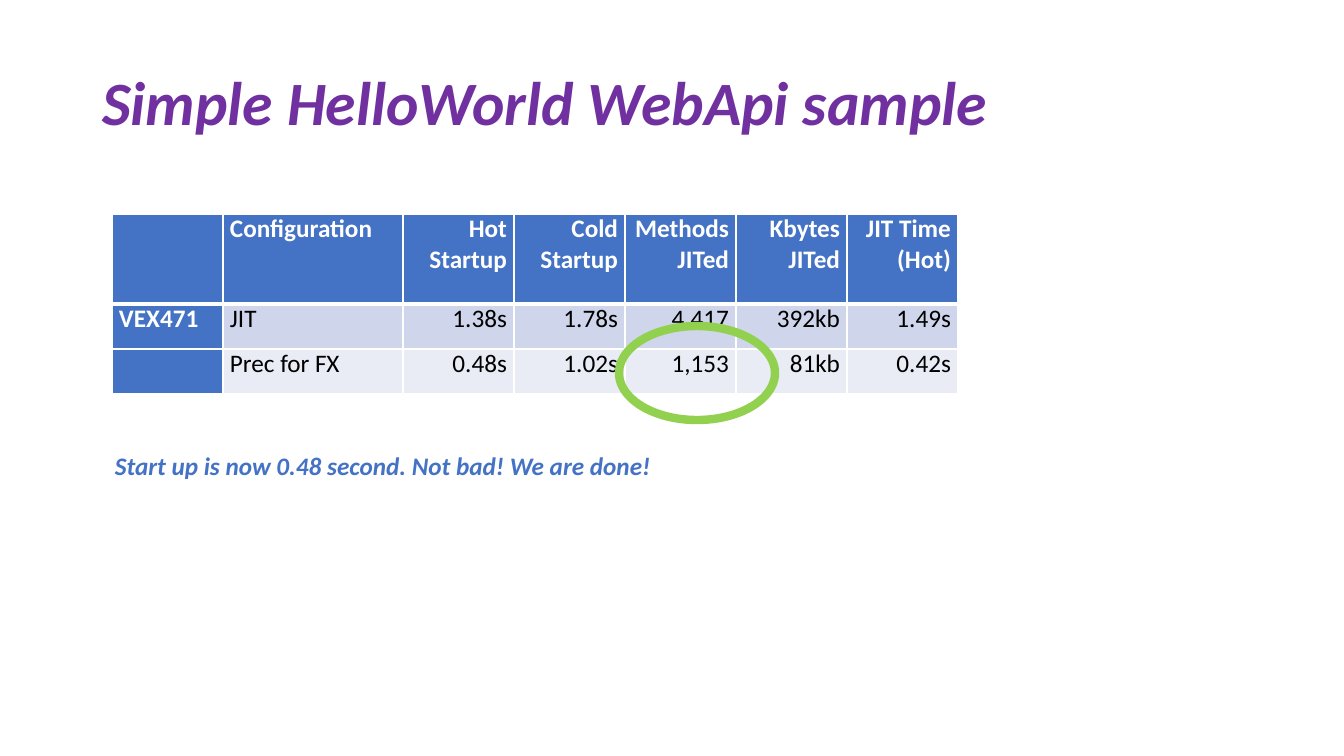
import pptx
import pptx.util
import pptx.dml.color
import pptx.enum.shapes
import pptx.enum.text
import pptx.oxml
import pptx.oxml.ns

RGBColor = pptx.dml.color.RGBColor
PP_ALIGN = pptx.enum.text.PP_ALIGN
MSO_ANCHOR = pptx.enum.text.MSO_ANCHOR

TITLE = "Simple HelloWorld WebApi sample"
NOTE = "Start up is now 0.48 second. Not bad! We are done!"
ROWS = [
    ["", "Configuration", "Hot Startup", "Cold Startup", "Methods JITed", "Kbytes JITed", "JIT Time (Hot)"],
    ["VEX471", "JIT", "1.38s", "1.78s", "4,417", "392kb", "1.49s"],
    ["", "Prec for FX", "0.48s", "1.02s", "1,153", "81kb", "0.42s"],
]
COL_WIDTHS = [111, 180] + [111] * 5
ROW_HEIGHTS = [90, 45, 45]

TITLE_BOX = (92, 33, 1159, 146)
TABLE_AT = (112, 214)
NOTE_BOX = (105, 445, 821, 40)
RING_BOX = (619, 326, 156, 94)
CELL_INSET = 7

FONT = "Calibri"
PURPLE = RGBColor(0x70, 0x30, 0xA0)
BLUE = RGBColor(0x44, 0x72, 0xC4)
GREEN = RGBColor(0x92, 0xD0, 0x50)
WHITE = RGBColor(0xFF, 0xFF, 0xFF)
BLACK = RGBColor(0, 0, 0)
BANDS = [RGBColor(0xCF, 0xD5, 0xEA), RGBColor(0xE9, 0xEB, 0xF5)]


def px(n):
    return pptx.util.Emu(round(n * 914400 / 100.8))


def box(lengths):
    return [px(n) for n in lengths]


def write(tf, text, size=18, color=BLACK, bold=False, italic=False, align=PP_ALIGN.LEFT, spacing=1.0):
    p = tf.paragraphs[0]
    p.alignment = align
    p.line_spacing = spacing
    r = p.add_run()
    r.text = text
    r.font.name = FONT
    r.font.size = pptx.util.Pt(size)
    r.font.color.rgb = color
    r.font.bold = bold
    r.font.italic = italic


def add_borders(cell, bottom):
    tc_pr = cell._tc.get_or_add_tcPr()
    for side, width in (("L", 1), ("R", 1), ("T", 1), ("B", bottom)):
        tc_pr.append(pptx.oxml.parse_xml(
            f'<a:ln{side} {pptx.oxml.ns.nsdecls("a")} w="{pptx.util.Pt(width)}">'
            f'<a:solidFill><a:srgbClr val="{WHITE}"/></a:solidFill></a:ln{side}>'))


def add_title(s):
    sp = s.shapes.title
    sp.left, sp.top, sp.width, sp.height = box(TITLE_BOX)
    tf = sp.text_frame
    tf.vertical_anchor = MSO_ANCHOR.MIDDLE
    write(tf, TITLE, size=44, color=PURPLE, bold=True, italic=True, spacing=0.9)


def add_results(s):
    size = (sum(COL_WIDTHS), sum(ROW_HEIGHTS))
    table = s.shapes.add_table(len(ROWS), len(COL_WIDTHS), *box(TABLE_AT + size)).table
    table.first_col = True
    for col, width in zip(table.columns, COL_WIDTHS):
        col.width = px(width)
    for i, row in enumerate(ROWS):
        table.rows[i].height = px(ROW_HEIGHTS[i])
        for j, text in enumerate(row):
            cell = table.cell(i, j)
            heading = i == 0 or j == 0
            add_borders(cell, 3 if i == 0 else 1)
            cell.fill.solid()
            cell.fill.fore_color.rgb = BLUE if heading else BANDS[i - 1]
            cell.margin_left = cell.margin_right = px(CELL_INSET)
            cell.margin_top = cell.margin_bottom = 0
            if text:
                write(cell.text_frame, text, color=WHITE if heading else BLACK, bold=heading,
                      align=PP_ALIGN.RIGHT if j > 1 else PP_ALIGN.LEFT)


def add_note(s):
    tf = s.shapes.add_textbox(*box(NOTE_BOX)).text_frame
    tf.word_wrap = True
    tf.auto_size = pptx.enum.text.MSO_AUTO_SIZE.SHAPE_TO_FIT_TEXT
    write(tf, NOTE, color=BLUE, bold=True, italic=True)


def add_ring(s):
    sp = s.shapes.add_shape(pptx.enum.shapes.MSO_SHAPE.OVAL, *box(RING_BOX))
    sp.shadow.inherit = False
    sp.fill.background()
    sp.line.color.rgb = GREEN
    sp.line.width = pptx.util.Pt(6)


def main():
    prs = pptx.Presentation()
    prs.slide_width, prs.slide_height = px(1344), px(756)
    s = prs.slides.add_slide(prs.slide_layouts[5])
    add_title(s)
    add_results(s)
    add_note(s)
    add_ring(s)
    prs.save("out.pptx")


if __name__ == "__main__":
    main()
